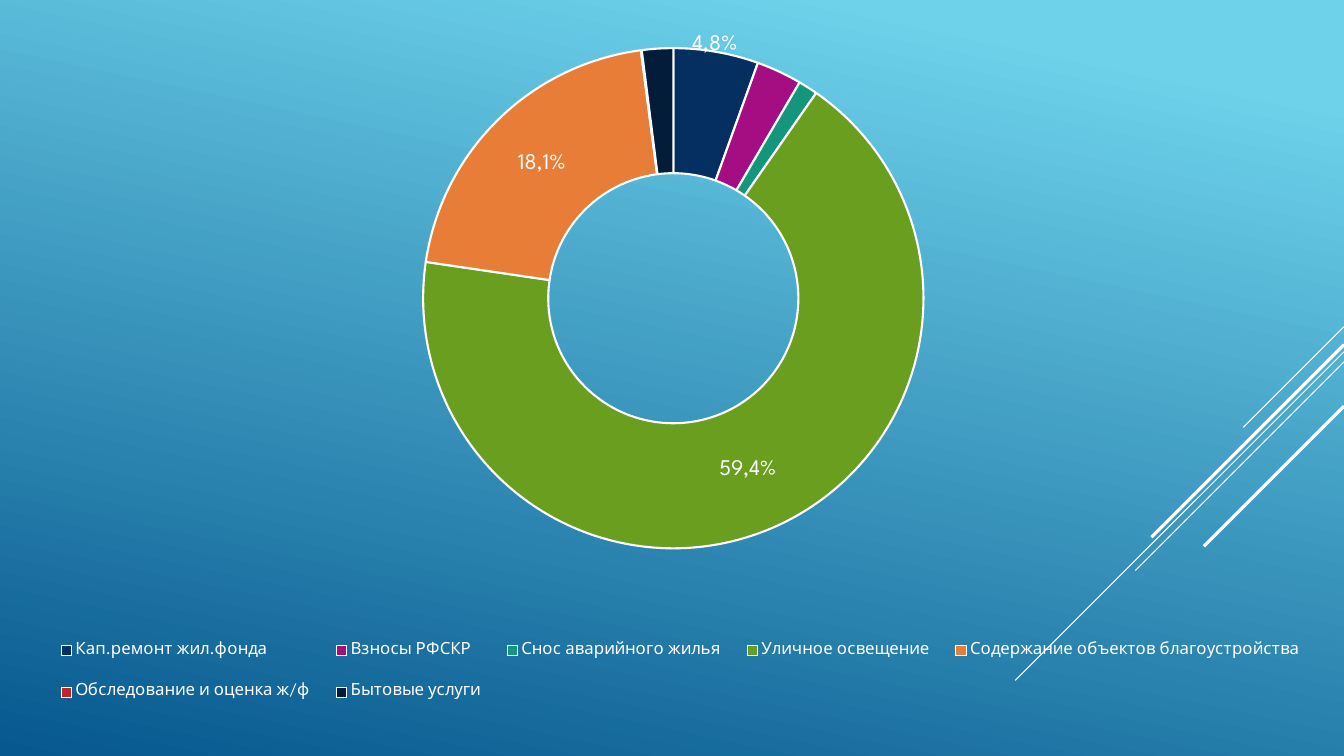
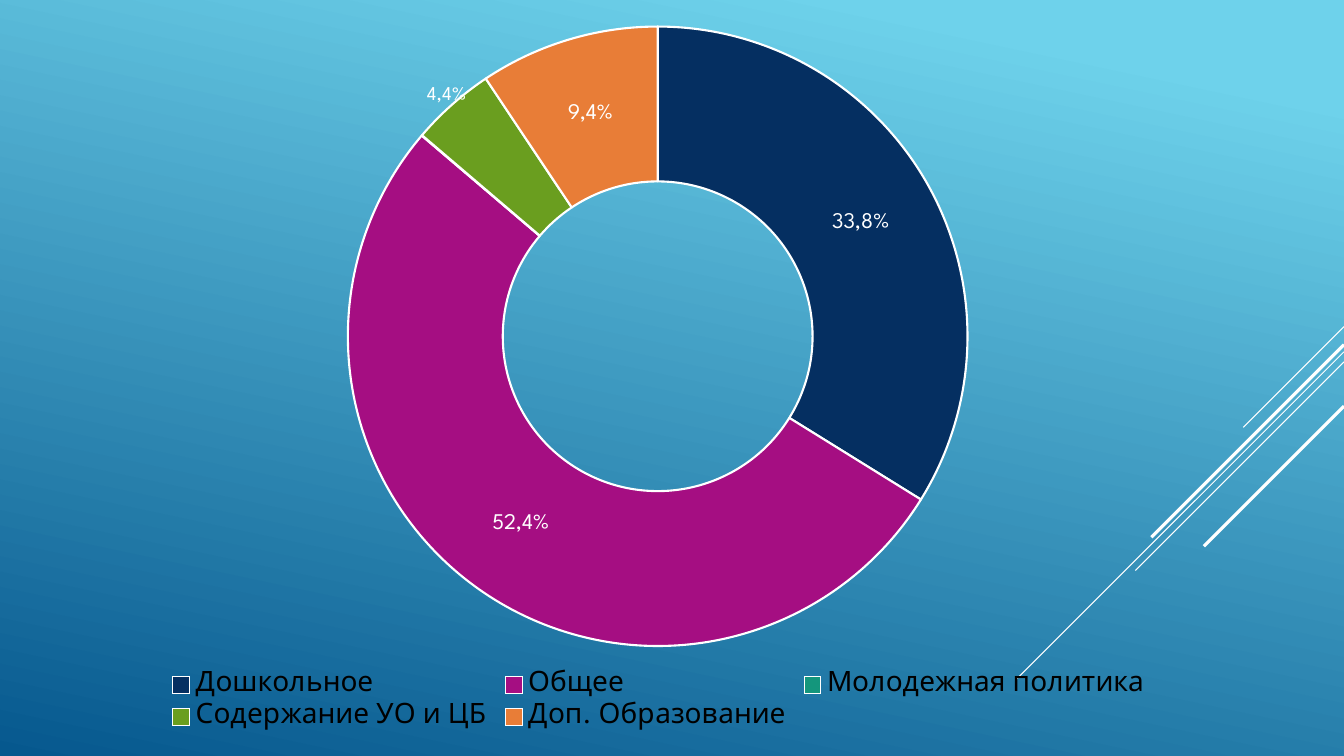
from dataclasses import dataclass

from lxml import etree
from pptx import Presentation
from pptx.chart.data import CategoryChartData
from pptx.dml.color import RGBColor
from pptx.enum.chart import XL_CHART_TYPE, XL_LEGEND_POSITION
from pptx.enum.shapes import MSO_CONNECTOR
from pptx.oxml.ns import qn
from pptx.util import Inches, Pt

DOUGHNUT = XL_CHART_TYPE.DOUGHNUT
LEGEND_BOTTOM = XL_LEGEND_POSITION.BOTTOM
STRAIGHT = MSO_CONNECTOR.STRAIGHT
BLANK_LAYOUT = 6


@dataclass(frozen=True)
class Theme:
    font: str = "League Spartan"
    white: str = "FFFFFF"
    black: str = "000000"
    sky: str = "6ED2EB"
    deep: str = "06588E"
    slices: tuple = ("052F61", "A50E82", "14967C", "6A9E1F", "E87D37", "C62324", "031C3A")
    base_size: int = 10
    label_size: int = 16
    small_label_size: int = 14
    border: float = 1.5
    width: float = 13.33
    height: float = 7.5


THEME = Theme()

# Diagonal rays: start height at the right edge, run to the left, line width
RAYS = [
    (3.24, 1.00, 0.75),
    (3.49, 3.26, 0.75),
    (3.59, 2.07, 0.75),
    (3.42, 1.91, 2.25),
    (4.03, 1.39, 2.25),
]

# Labels: slice index -> (text, size, shift as fractions of the chart or None)
HOUSING = {
    "box": (0.14, 0.31, 13.09, 7),
    "plot": (0.307, 0.024, 0.385, 0.709),
    "legend": (12, THEME.white, (0.02, 0.83, 0.97, 0.155)),
    "values": {
        "Кап.ремонт жил.фонда": 206,
        "Взносы РФСКР": 110,
        "Снос аварийного жилья": 47,
        "Уличное освещение": 2537,
        "Содержание объектов благоустройства": 773,
        "Обследование и оценка ж/ф": 2.1,
        "Бытовые услуги": 75.5,
    },
    "labels": {
        0: ("4,8%", THEME.label_size, (0.007, -0.097)),
        3: ("59,4%", THEME.label_size, None),
        4: ("18,1%", THEME.label_size, None),
    },
}
EDUCATION = {
    "box": (0, 0.12, 13.06, 7.18),
    "plot": (0.264, 0.02, 0.471, 0.856),
    "legend": (20, THEME.black, None),
    "values": {
        "Дошкольное ": 34775,
        "Общее": 53837,
        "Молодежная политика": 24.8,
        "Содержание УО и ЦБ": 4515,
        "Доп. Образование": 9622,
    },
    "labels": {
        0: ("33,8%", THEME.label_size, None),
        1: ("52,4%", THEME.label_size, None),
        3: ("4,4%", THEME.small_label_size, (-0.043, -0.092)),
        4: ("9,4%", THEME.label_size, None),
    },
}


def rgb(value):
    return RGBColor.from_string(value)


def style_font(font, size, color, bold=False):
    font.name = THEME.font
    font.size = Pt(size)
    font.bold = bold
    font.color.rgb = rgb(color)


def set_layout(parent, position, settings):
    """Give a chart part a manual layout, as its child number `position`."""
    for old in parent.findall(qn("c:layout")):
        parent.remove(old)
    layout = etree.Element(qn("c:layout"))
    manual = etree.SubElement(layout, qn("c:manualLayout"))
    for name, value in settings.items():
        etree.SubElement(manual, qn("c:" + name)).set("val", str(value))
    parent.insert(position, layout)


def frame_settings(frame):
    return {"xMode": "edge", "yMode": "edge", **dict(zip("xywh", frame))}


# Shared backdrop on the slide master
def paint_background(master):
    fill = master.background.fill
    fill.gradient()
    fill.gradient_angle = 258
    stops = zip(fill.gradient_stops, (0.1, 1), (THEME.sky, THEME.deep))
    for stop, position, color in stops:
        stop.position = position
        stop.color.rgb = rgb(color)


def add_rays(master, slide):
    """Draw the rays with the slide's shapes, then hand them to the master."""
    for number, (top, run, weight) in enumerate(RAYS):
        ray = slide.shapes.add_connector(
            STRAIGHT, Inches(THEME.width), Inches(top),
            Inches(THEME.width - run), Inches(top + run))
        ray.name = f"Ray {number + 1}"
        ray.line.color.rgb = rgb(THEME.white)
        ray.line.width = Pt(weight)
        properties = ray.element.find(qn("p:spPr"))
        etree.SubElement(properties, qn("a:effectLst"))
        ray.element.xpath(".//p:cNvPr")[0].set("id", str(100 + number))
        master.shapes.element.append(ray.element)


# Doughnut charts
def add_legend(chart, size, color, frame):
    chart.has_legend = True
    chart.legend.position = LEGEND_BOTTOM
    chart.legend.include_in_layout = False
    style_font(chart.legend.font, size, color)
    if frame:
        set_layout(chart.element.xpath(".//c:legend")[0], 1, frame_settings(frame))


def hide_label(label):
    """Keep only the slice index and switch the label off."""
    for part in list(label)[1:]:
        label.remove(part)
    etree.SubElement(label, qn("c:delete")).set("val", "1")


def add_labels(chart, labels, count):
    series = chart.plots[0].series[0]
    defaults = series.data_labels
    defaults.show_value = True
    style_font(defaults.font, THEME.label_size, THEME.white, bold=True)
    for index in range(count):
        frame = series.points[index].data_label.text_frame
        label = chart.element.xpath(f".//c:dLbl[c:idx/@val='{index}']")[0]
        if index not in labels:
            hide_label(label)
            continue
        text, size, shift = labels[index]
        span = frame.paragraphs[0].add_run()
        span.text = text
        style_font(span.font, size, THEME.white)
        if shift:
            set_layout(label, 1, dict(zip("xy", shift)))
    for leader in chart.element.xpath(".//c:showLeaderLines"):
        leader.set("val", "0")


def add_doughnut(slide, content):
    values = content["values"]
    data = CategoryChartData()
    data.categories = list(values)
    data.add_series("Series 1", list(values.values()))
    box = [Inches(length) for length in content["box"]]
    chart = slide.shapes.add_chart(DOUGHNUT, *box, data).chart
    chart.has_title = False
    style_font(chart.font, THEME.base_size, THEME.white)
    plot = chart.plots[0]
    plot.vary_by_categories = True
    for index, color in zip(range(len(values)), THEME.slices):
        slice_format = plot.series[0].points[index].format
        slice_format.fill.solid()
        slice_format.fill.fore_color.rgb = rgb(color)
        slice_format.line.color.rgb = rgb(THEME.white)
        slice_format.line.width = Pt(THEME.border)
    add_labels(chart, content["labels"], len(values))
    add_legend(chart, *content["legend"])
    set_layout(chart.element.xpath(".//c:plotArea")[0], 0,
               {"layoutTarget": "inner", **frame_settings(content["plot"])})


def main():
    deck = Presentation()
    deck.slide_width = Inches(THEME.width)
    deck.slide_height = Inches(THEME.height)
    pages = [deck.slides.add_slide(deck.slide_layouts[BLANK_LAYOUT]) for _ in range(2)]
    paint_background(deck.slide_master)
    add_rays(deck.slide_master, pages[0])
    for page, content in zip(pages, (HOUSING, EDUCATION)):
        add_doughnut(page, content)
    deck.save("out.pptx")


if __name__ == "__main__":
    main()
